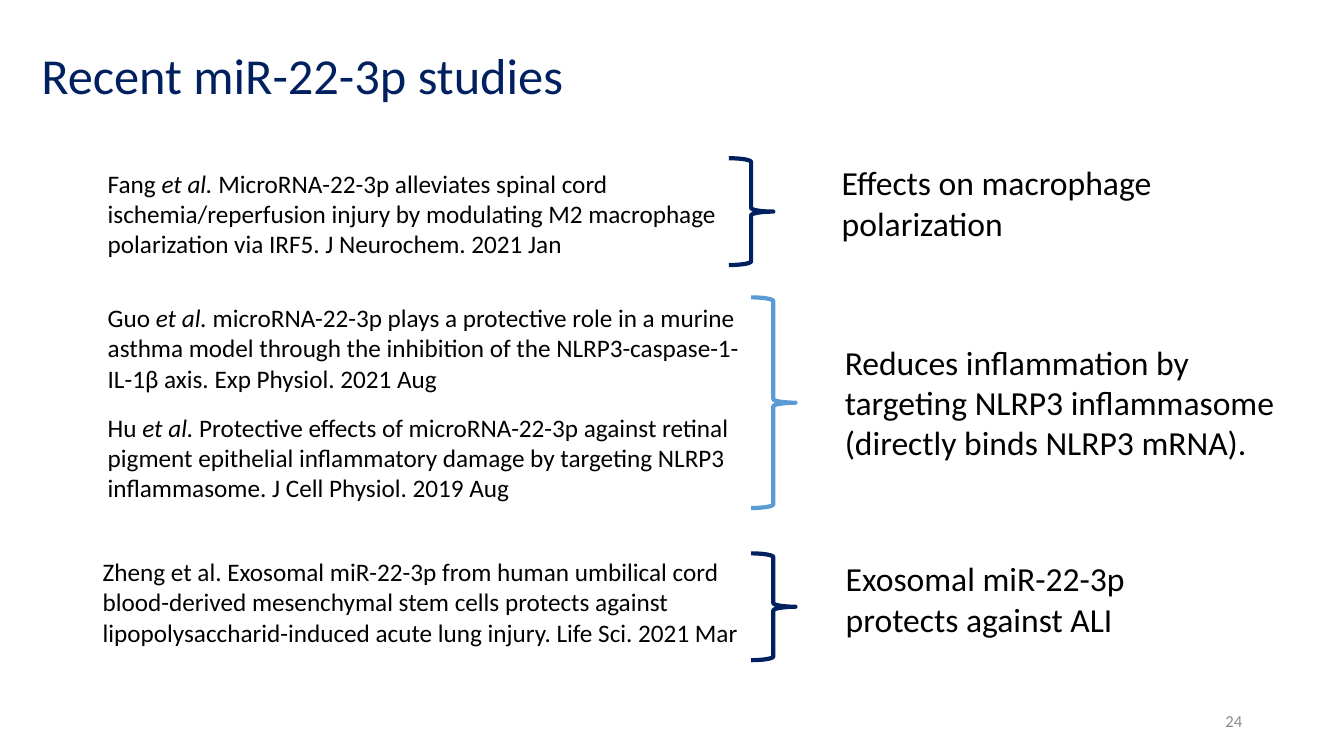
from pptx import Presentation
from pptx.dml.color import RGBColor
from pptx.enum import shapes, text
from pptx.util import Inches, Pt

NAVY, BLUE, BLACK, GRAY = "002060", "5B9BD5", "000000", "8C8C8C"


def paint(target, color):
    target.rgb = RGBColor.from_string(color)


class Page:
    font = "Calibri"

    def __init__(self, deck):
        self.slide = deck.slides.add_slide(deck.slide_layouts[5])

    def style(self, frame, size, color, align=text.PP_ALIGN.LEFT,
              anchor=text.MSO_ANCHOR.TOP):
        frame.word_wrap = True
        frame.auto_size = text.MSO_AUTO_SIZE.NONE
        frame.vertical_anchor = anchor
        line = frame.paragraphs[0]
        line.alignment = align
        for run in line.runs:
            run.font.name = self.font
            run.font.size = Pt(size)
            paint(run.font.color, color)

    def title(self, words, left, top, width, height):
        shape = self.slide.shapes.title
        shape.left, shape.top = Inches(left), Inches(top)
        shape.width, shape.height = Inches(width), Inches(height)
        shape.text_frame.text = words
        self.style(shape.text_frame, 36, NAVY)

    def label(self, parts, box, size, color=BLACK, **layout):
        shape = self.slide.shapes.add_textbox(*map(Inches, box))
        line = shape.text_frame.paragraphs[0]
        for part in parts:
            run = line.add_run()
            run.text = part
            if part == "et al. ":
                run.font.italic = True
        self.style(shape.text_frame, size, color, **layout)

    def brace(self, left, top, height, color):
        shape = self.slide.shapes.add_shape(
            shapes.MSO_SHAPE.RIGHT_BRACE, Inches(left), Inches(top),
            Inches(0.44), Inches(height))
        shape.shadow.inherit = False
        shape.fill.background()
        shape.line.width = Pt(3)
        paint(shape.line.color, color)


PAPERS = [
    (["Fang ", "et al. ", "MicroRNA-22-3p alleviates spinal cord "
      "ischemia/reperfusion injury by modulating M2 macrophage "
      "polarization via IRF5. J Neurochem. 2021 Jan"], 0.97, 1.62, 7.19),
    (["Guo ", "et al. ", "microRNA-22-3p plays a protective role in a murine "
      "asthma model through the inhibition of the NLRP3-caspase-1-IL-1β axis. "
      "Exp Physiol. 2021 Aug"], 0.97, 2.95, 6.67),
    (["Hu ", "et al. ", "Protective effects of microRNA-22-3p against retinal "
      "pigment epithelial inflammatory damage by targeting NLRP3 "
      "inflammasome. J Cell Physiol. 2019 Aug"], 0.97, 4.04, 6.67),
    (["Zheng et al. Exosomal miR-22-3p from human umbilical cord "
      "blood-derived mesenchymal stem cells protects against "
      "lipopolysaccharid-induced acute lung injury. Life Sci. 2021 Mar"],
     0.92, 5.47, 6.67),
]
EFFECTS = [
    ("Effects on macrophage polarization", (8.25, 1.56, 4.16, 0.91)),
    ("Reduces inflammation by targeting NLRP3 inflammasome "
     "(directly binds NLRP3 mRNA).", (8.28, 3.34, 4.59, 1.31)),
    ("Exosomal miR-22-3p protects against ALI", (8.29, 5.49, 4.13, 0.91)),
]
BRACES = [
    (7.23, 1.57, 1.06, NAVY),
    (7.45, 2.95, 2.09, BLUE),
    (7.45, 5.49, 1.06, NAVY),
]


def main():
    deck = Presentation()
    deck.slide_width, deck.slide_height = Inches(13.33), Inches(7.5)
    page = Page(deck)
    page.title("Recent miR-22-3p studies", 0.31, 0.39, 10.73, 0.71)
    for parts, left, top, width in PAPERS:
        page.label(parts, (left, top, width, 1.01), 18)
    for words, box in EFFECTS:
        page.label([words], box, 24)
    for brace in BRACES:
        page.brace(*brace)
    page.label(["24"], (9.42, 6.95, 3, 0.4), 12, GRAY,
               align=text.PP_ALIGN.RIGHT, anchor=text.MSO_ANCHOR.MIDDLE)
    deck.save("out.pptx")


if __name__ == "__main__":
    main()
